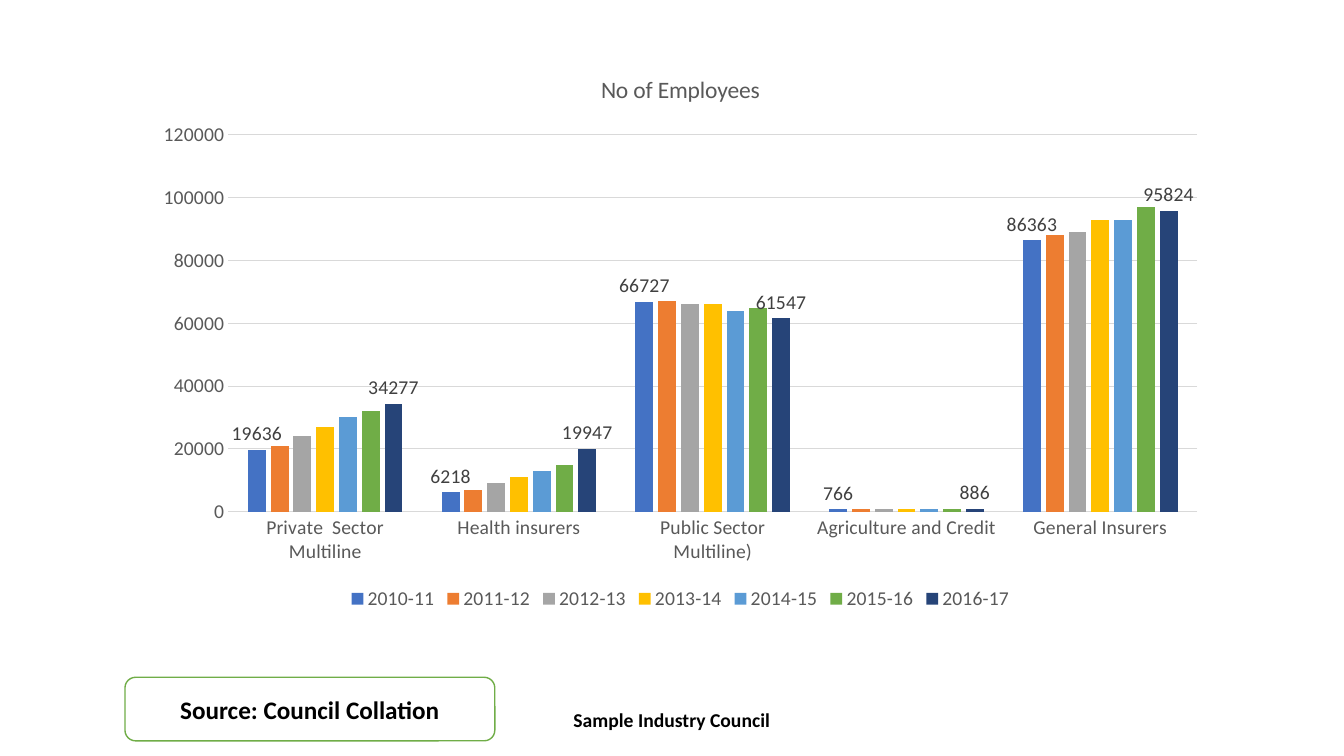
from pptx import Presentation
from pptx.chart.data import CategoryChartData
from pptx.dml.color import RGBColor
from pptx.enum.chart import XL_CHART_TYPE as CT, XL_LABEL_POSITION as LP
from pptx.enum.chart import XL_LEGEND_POSITION as LEGEND, XL_TICK_MARK as TICK
from pptx.enum.shapes import MSO_SHAPE
from pptx.enum.text import MSO_ANCHOR, PP_ALIGN
from pptx.util import Pt

# Content
TITLE = "No of Employees"
SOURCE = "Source: Council Collation"
FOOTER = "Sample Industry Council"
CATEGORIES = ["Private  Sector Multiline", "Health insurers",
              "Public Sector Multiline)", "Agriculture and Credit",
              "General Insurers"]
GREEN = RGBColor(0x70, 0xAD, 0x47)
SERIES = [  # year, colour, employees per category
    ("2010-11", RGBColor(0x44, 0x72, 0xC4), (19636, 6218, 66727, 766, 86363)),
    ("2011-12", RGBColor(0xED, 0x7D, 0x31), (21000, 7000, 67000, 1000, 88000)),
    ("2012-13", RGBColor(0xA5, 0xA5, 0xA5), (24000, 9000, 66000, 1000, 89000)),
    ("2013-14", RGBColor(0xFF, 0xC0, 0x00), (27000, 11000, 66000, 1000, 93000)),
    ("2014-15", RGBColor(0x5B, 0x9B, 0xD5), (30000, 13000, 64000, 1000, 93000)),
    ("2015-16", GREEN, (32000, 15000, 65000, 1000, 97000)),
    ("2016-17", RGBColor(0x26, 0x44, 0x78), (34277, 19947, 61547, 886, 95824)),
]
LABELLED = ("2010-11", "2016-17")

BLACK = RGBColor(0, 0, 0)
WHITE = RGBColor(0xFF, 0xFF, 0xFF)
GREY = RGBColor(0x59, 0x59, 0x59)
DARK_GREY = RGBColor(0x40, 0x40, 0x40)
LIGHT_GREY = RGBColor(0xD9, 0xD9, 0xD9)


def set_font(font, size, color, bold=False):
    font.name, font.size, font.bold = "Calibri", Pt(size), bold
    font.color.rgb = color


def set_line(line, color, width):
    line.color.rgb, line.width = color, Pt(width)


def write(sp, text, size):
    tf = sp.text_frame
    tf.word_wrap = True
    tf.text = text
    p = tf.paragraphs[0]
    p.alignment = PP_ALIGN.CENTER
    set_font(p.runs[0].font, size, BLACK, bold=True)


prs = Presentation()
prs.slide_width, prs.slide_height = Pt(960), Pt(540)
slide = prs.slides.add_slide(prs.slide_layouts[6])

# Chart
data = CategoryChartData()
data.categories = CATEGORIES
for year, _, values in SERIES:
    data.add_series(year, values)
chart = slide.shapes.add_chart(CT.COLUMN_CLUSTERED, Pt(101.5), Pt(37.4),
                               Pt(769), Pt(401.8), data).chart
set_font(chart.font, 14, BLACK)
chart.has_title = True
title = chart.chart_title
title.text_frame.text = TITLE
title.include_in_layout = False
set_font(title.text_frame.paragraphs[0].runs[0].font, 16.8, GREY)

# Columns
plot = chart.plots[0]
plot.gap_width, plot.overlap = 219, -27
plot.vary_by_categories = False
for series, (year, color, _) in zip(plot.series, SERIES):
    series.format.fill.solid()
    series.format.fill.fore_color.rgb = color
    series.invert_if_negative = False
    if year in LABELLED:
        labels = series.data_labels
        labels.show_value = True
        labels.position = LP.OUTSIDE_END
        set_font(labels.font, 14, DARK_GREY)

# Axes and legend
for axis in (chart.category_axis, chart.value_axis):
    axis.major_tick_mark = axis.minor_tick_mark = TICK.NONE
    set_font(axis.tick_labels.font, 14, GREY)
set_line(chart.category_axis.format.line, LIGHT_GREY, 0.75)
values_axis = chart.value_axis
values_axis.minimum_scale, values_axis.maximum_scale = 0, 120000
values_axis.major_unit = 20000
values_axis.format.line.fill.background()
set_line(values_axis.major_gridlines.format.line, LIGHT_GREY, 0.75)
chart.has_legend = True
chart.legend.position = LEGEND.BOTTOM
chart.legend.include_in_layout = False
set_font(chart.legend.font, 14, GREY)

# Footer
footer = slide.shapes.add_textbox(Pt(347.8), Pt(501.8), Pt(264.2), Pt(24.5))
write(footer, FOOTER, 14)

# Source box
box = slide.shapes.add_shape(MSO_SHAPE.ROUNDED_RECTANGLE,
                             Pt(89.3), Pt(483.8), Pt(264.2), Pt(45.4))
box.shadow.inherit = False
box.fill.solid()
box.fill.fore_color.rgb = WHITE
set_line(box.line, GREEN, 1)
box.text_frame.vertical_anchor = MSO_ANCHOR.MIDDLE
write(box, SOURCE, 18)

prs.save("out.pptx")
